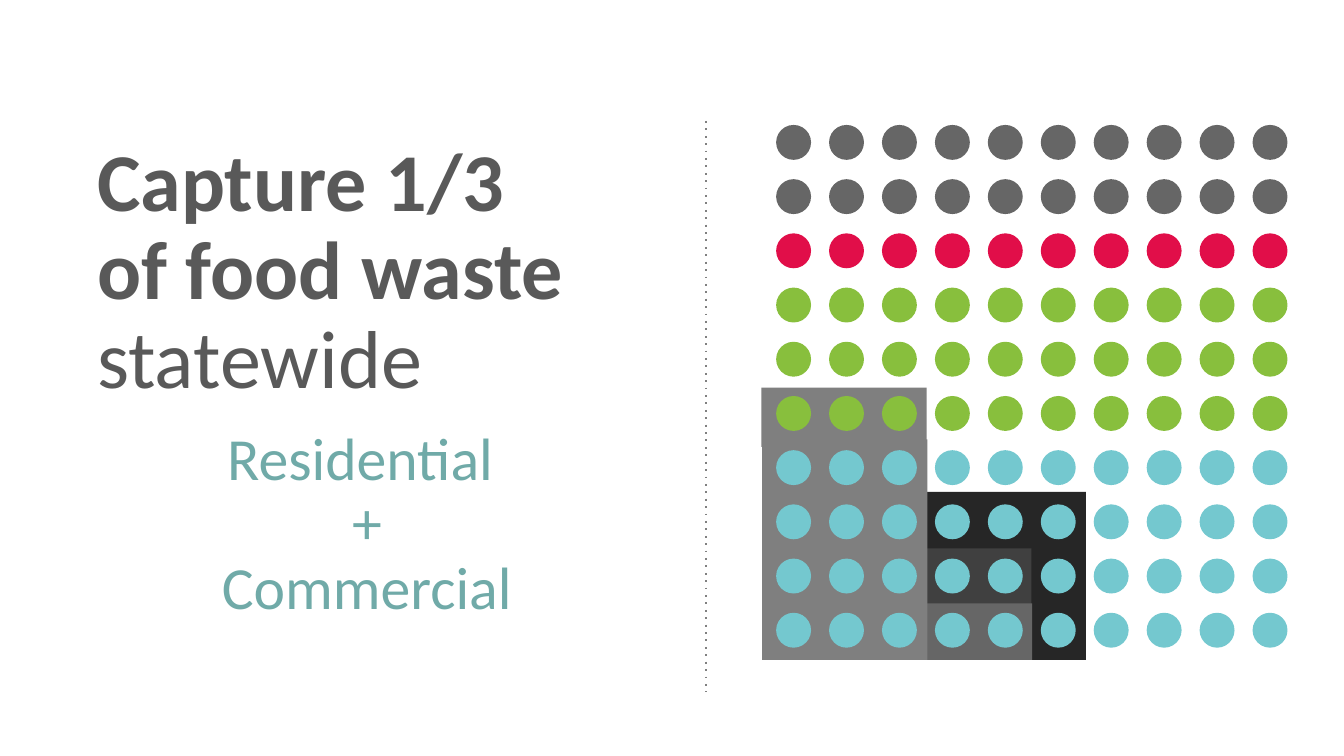
import pptx
import pptx.dml.color
import pptx.enum.shapes
import pptx.enum.text
import pptx.oxml
import pptx.util
import lxml.etree

PX = 4572  # EMU per px, 200 px to the inch
COLORS = {
    "heading": "595959", "sector": "70AAA8", "divider": "808080",
    "grey": "666666", "red": "E10E49", "green": "88BF3D", "blue": "74C8CF",
    "mid_grey": "7F7F7F", "black": "262626", "dark_grey": "404040",
}
ROW_COLORS = ["grey"] * 2 + ["red"] + ["green"] * 3 + ["blue"] * 4
COLUMN_COUNT = 10
DOT_SIZE = 52
# Offset from the dot field, size, rotation and colour of each backing block
BLOCKS = [
    (57, 312, 88, 246, 90, "mid_grey"),
    (223, 546, 238, 250, 0, "black"),
    (223, 630, 157, 166, 0, "dark_grey"),
    (217, 712, 164, 84, 0, "grey"),
    (-21, 468, 246, 328, 0, "mid_grey"),
]
HEADING = {"name": "Calibri", "size": pptx.util.Pt(44), "bold": True}
HEADING_LIGHT = {**HEADING, "bold": False}
SECTOR = {"name": "Calibri", "size": pptx.util.Pt(32), "bold": False}


def emu(*lengths):
    return [pptx.util.Emu(round(length * PX)) for length in lengths]


def rgb(name):
    return pptx.dml.color.RGBColor.from_string(COLORS[name])


def set_attributes(target, values):
    for name, value in values.items():
        setattr(target, name, value)


def add_filled_shape(shapes, kind, box, color):
    shape = shapes.add_shape(kind, *emu(*box))
    shape.shadow.inherit = False
    shape.fill.solid()
    shape.fill.fore_color.rgb = rgb(color)
    shape.line.fill.background()
    return shape


def add_run(paragraph, text, font, color):
    run = paragraph.add_run()
    run.text = text
    set_attributes(run.font, font)
    run.font.color.rgb = rgb(color)


def add_message(slide, left, top, width, height):
    text_box = slide.shapes.add_textbox(*emu(left, top, width, height))
    frame = text_box.text_frame
    frame.word_wrap = True
    paragraph = frame.paragraphs[0]
    set_attributes(paragraph, {"line_spacing": 0.9, "space_before": pptx.util.Pt(10)})
    add_run(paragraph, "Capture 1/3 of food waste ", HEADING, "heading")
    add_run(paragraph, "statewide", HEADING_LIGHT, "heading")

    for text, space_before in (("Residential ", 12), ("+", 0), ("Commercial", 0)):
        paragraph = frame.add_paragraph()
        set_attributes(paragraph, {
            "alignment": pptx.enum.text.PP_ALIGN.CENTER,
            "level": 1,
            "line_spacing": 0.9,
            "space_before": pptx.util.Pt(space_before),
        })
        properties = paragraph._p.get_or_add_pPr()
        properties.set("marL", str(100 * PX))
        properties.set("indent", "0")
        add_run(paragraph, text, SECTOR, "sector")


def add_divider(slide, x, top, bottom):
    connector = slide.shapes.add_connector(
        pptx.enum.shapes.MSO_CONNECTOR.STRAIGHT, *emu(x, top, x, bottom))
    connector.line.color.rgb = rgb("divider")
    connector.line.width = pptx.util.Pt(1)
    properties = connector._element.spPr
    outline = properties.find(pptx.oxml.ns.qn("a:ln"))
    lxml.etree.SubElement(outline, pptx.oxml.ns.qn("a:prstDash"), val="dot")
    lxml.etree.SubElement(properties, pptx.oxml.ns.qn("a:effectLst"))


def add_dot_field(slide, left, top, width, height):
    """Ten rows of dots, one group per row, over the blocks that mark shares."""
    for x, y, block_width, block_height, rotation, color in BLOCKS:
        block = add_filled_shape(
            slide.shapes, pptx.enum.shapes.MSO_SHAPE.RECTANGLE,
            (left + x, top + y, block_width, block_height), color)
        block.rotation = rotation

    column_step = (width - DOT_SIZE) / (COLUMN_COUNT - 1)
    row_step = (height - DOT_SIZE) / (len(ROW_COLORS) - 1)
    for row, color in enumerate(ROW_COLORS):
        group = slide.shapes.add_group_shape()
        for column in range(COLUMN_COUNT):
            box = (left + column * column_step, top + row * row_step,
                   DOT_SIZE, DOT_SIZE)
            add_filled_shape(
                group.shapes, pptx.enum.shapes.MSO_SHAPE.OVAL, box, color)


def main():
    presentation = pptx.Presentation()
    slide_width, slide_height = emu(2000, 1125)
    set_attributes(presentation, {
        "slide_width": slide_width, "slide_height": slide_height})
    slide = presentation.slides.add_slide(presentation.slide_layouts[6])
    add_dot_field(slide, 1155, 186, 761, 778)
    add_message(slide, 125, 199, 742, 714)
    add_divider(slide, 1050, 180, 1030)
    presentation.save("out.pptx")


if __name__ == "__main__":
    main()
